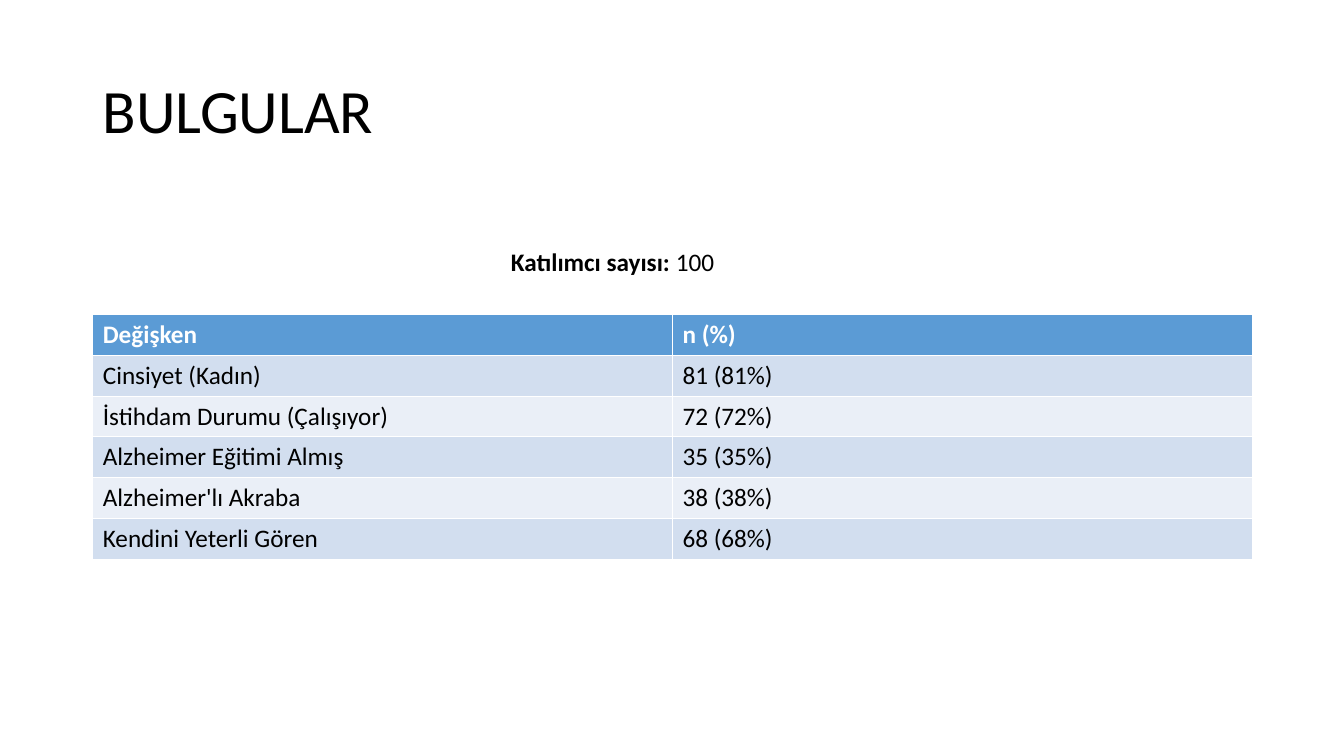
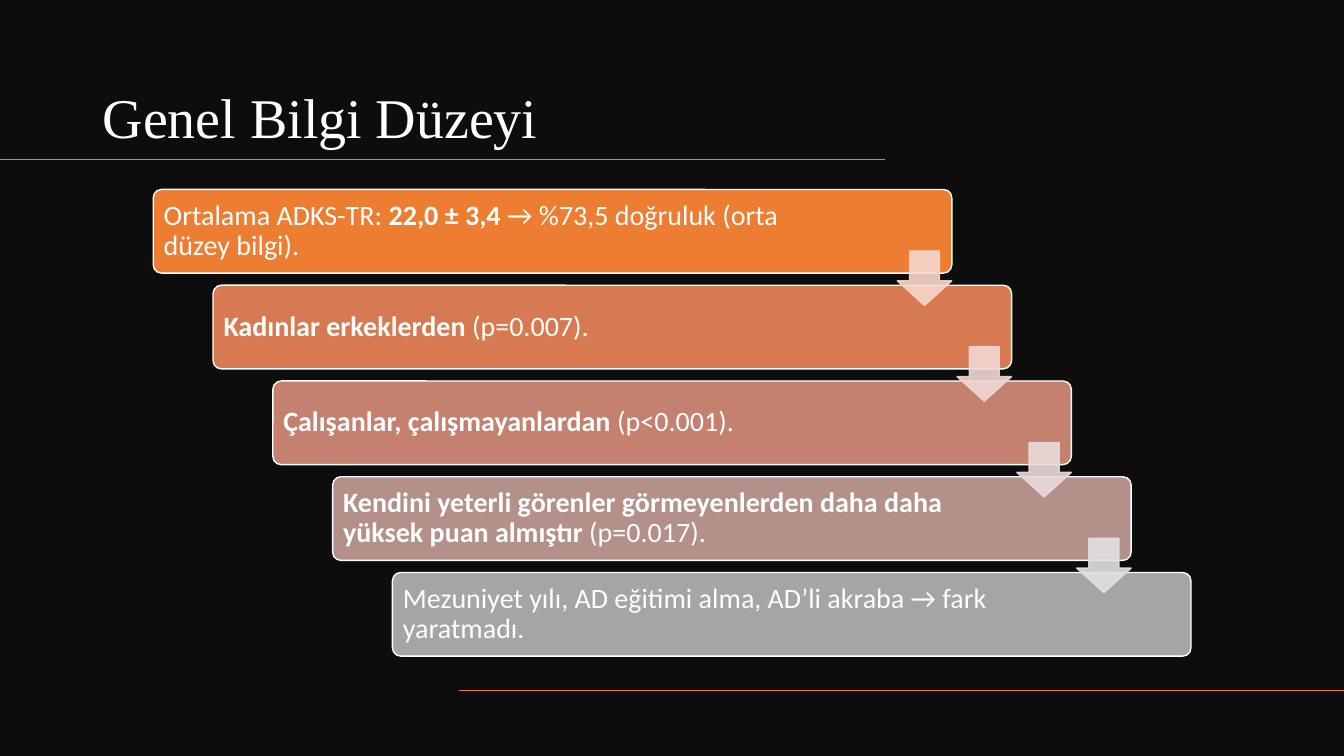
from dataclasses import dataclass

from lxml import etree
from pptx import Presentation
from pptx.dml.color import RGBColor
from pptx.enum.shapes import MSO_CONNECTOR, MSO_SHAPE
from pptx.enum.text import MSO_ANCHOR, PP_ALIGN
from pptx.oxml.ns import qn
from pptx.util import Inches, Pt

STRAIGHT = MSO_CONNECTOR.STRAIGHT
ROUND_RECT, DOWN_ARROW = MSO_SHAPE.ROUNDED_RECTANGLE, MSO_SHAPE.DOWN_ARROW
MIDDLE, BOTTOM = MSO_ANCHOR.MIDDLE, MSO_ANCHOR.BOTTOM
LEFT = PP_ALIGN.LEFT


@dataclass(frozen=True)
class Theme:
    body_font: str = "Calibri"
    serif_font: str = "Times New Roman"
    title_size: int = 44
    dark_title_size: int = 40
    step_size: int = 20
    table_size: int = 18
    black: str = "000000"
    white: str = "FFFFFF"
    dark: str = "0D0D0D"
    accent: str = "ED7D31"
    header: str = "5B9BD5"
    bands: tuple = ("D2DEEF", "EAEFF7")
    steps: tuple = ("ED7D31", "D87A51", "C48170", "B4908B", "A5A5A5")
    arrows: tuple = ("F8D7CE", "F1D8D4", "E9DBDA", "E1E1E1")
    arrow_opacity: int = 90


THEME = Theme()
SLIDE_W, SLIDE_H = 13.33, 7.5
MARGIN = 0.92

FINDINGS = [
    ("Değişken", "n (%)"),
    ("Cinsiyet (Kadın)", "81 (81%)"),
    ("İstihdam Durumu (Çalışıyor)", "72 (72%)"),
    ("Alzheimer Eğitimi Almış", "35 (35%)"),
    ("Alzheimer'lı Akraba", "38 (38%)"),
    ("Kendini Yeterli Gören", "68 (68%)"),
]

# Each step is a list of (text, bold) runs.
STEPS = [
    [("Ortalama ADKS-TR: ", False), ("22,0 ± 3,4", True),
     (" → %73,5 doğruluk (orta düzey bilgi).", False)],
    [("Kadınlar erkeklerden ", True), ("(p=0.007).", False)],
    [("Çalışanlar, çalışmayanlardan ", True), ("(p<0.001).", False)],
    [("Kendini yeterli görenler görmeyenlerden daha daha yüksek puan almıştır", True),
     (" (p=0.017).", False)],
    [("Mezuniyet yılı, AD eğitimi alma, AD’li akraba → fark yaratmadı.", False)],
]


def rgb(value):
    return RGBColor.from_string(value)


def inches(*values):
    return [Inches(v) for v in values]


def write(tf, runs, size, color, font=THEME.body_font, spacing=None):
    """Fill the first paragraph with (text, bold) runs."""
    p = tf.paragraphs[0]
    p.alignment = LEFT
    if spacing:
        p.line_spacing = spacing
    for text, bold in runs:
        r = p.add_run()
        r.text = text
        for name, value in {"name": font, "size": Pt(size), "bold": bold}.items():
            setattr(r.font, name, value)
        r.font.color.rgb = rgb(color)


def add_text(s, box, runs, size, color, anchor=None, **style):
    tf = s.shapes.add_textbox(*inches(*box)).text_frame
    tf.word_wrap = True
    tf.vertical_anchor = anchor
    write(tf, runs, size, color, **style)


def add_title(s, box, text, size, color, anchor, font):
    add_text(s, box, [(text, False)], size, color, anchor, font=font, spacing=0.9)


def add_rule(s, x1, x2, y):
    rule = s.shapes.add_connector(STRAIGHT, *inches(x1, y, x2, y))
    rule.line.color.rgb = rgb(THEME.accent)
    rule.line.width = Pt(1)
    etree.SubElement(rule._element.spPr, qn("a:effectLst"))


def add_shape(s, kind, box, adjustments, fill, line):
    sp = s.shapes.add_shape(kind, *inches(*box))
    sp.shadow.inherit = False
    for i, value in enumerate(adjustments):
        sp.adjustments[i] = value
    sp.fill.solid()
    sp.fill.fore_color.rgb = rgb(fill)
    sp.line.color.rgb = rgb(line)
    sp.line.width = Pt(1)
    return sp


def add_step(s, box, runs, fill):
    sp = add_shape(s, ROUND_RECT, box, [0.1], fill, THEME.white)
    tf = sp.text_frame
    layout = {"word_wrap": True, "vertical_anchor": MIDDLE,
              "margin_left": Inches(0.08), "margin_right": Inches(1.23),
              "margin_top": Inches(0.08), "margin_bottom": Inches(0.08)}
    for name, value in layout.items():
        setattr(tf, name, value)
    write(tf, runs, THEME.step_size, THEME.white, spacing=0.9)


def add_arrow(s, box, color):
    sp = add_shape(s, DOWN_ARROW, box, [0.45, 0.55], color, color)
    # Adjustments run head length first, shaft width second.
    sp.adjustments[0], sp.adjustments[1] = 0.55, 0.45
    for clr in sp._element.spPr.iter(qn("a:srgbClr")):
        etree.SubElement(clr, qn("a:alpha"), val=str(THEME.arrow_opacity * 1000))


def add_table(s, rows, left, top, width, row_h):
    shape = s.shapes.add_table(len(rows), len(rows[0]),
                               *inches(left, top, width, row_h * len(rows)))
    for i, row in enumerate(rows):
        is_header = i == 0
        fill = THEME.header if is_header else THEME.bands[(i - 1) % 2]
        color = THEME.white if is_header else THEME.black
        for j, text in enumerate(row):
            cell = shape.table.cell(i, j)
            cell.fill.solid()
            cell.fill.fore_color.rgb = rgb(fill)
            cell.vertical_anchor = MIDDLE
            write(cell.text_frame, [(text, is_header)], THEME.table_size, color)


def add_staircase(s, left=1.52, top=1.88, width=7.92, height=0.83,
                  dx=0.593, dy=0.95, arrow=0.54, arrow_drop=0.61):
    """Step boxes descend to the right; an arrow joins each to the next."""
    corners = [(left + i * dx, top + i * dy) for i in range(len(STEPS))]
    for (x, y), runs, fill in zip(corners, STEPS, THEME.steps):
        add_step(s, (x, y, width, height), runs, fill)
    for (x, y), color in zip(corners, THEME.arrows):
        add_arrow(s, (x + width - arrow, y + arrow_drop, arrow, arrow), color)


def findings_slide(s):
    add_title(s, (MARGIN, 0.4, 11.5, 1.45), "BULGULAR", THEME.title_size,
              THEME.black, MIDDLE, THEME.body_font)
    add_table(s, FINDINGS, MARGIN, 3.12, 11.5, 0.405)
    add_text(s, (4.97, 2.39, 2.63, 0.4),
             [("Katılımcı sayısı:", True), (" 100", False)],
             THEME.table_size, THEME.black)


def knowledge_slide(s):
    s.background.fill.solid()
    s.background.fill.fore_color.rgb = rgb(THEME.dark)
    add_title(s, (MARGIN, 0.42, 7.86, 1.12), "Genel Bilgi Düzeyi",
              THEME.dark_title_size, THEME.white, BOTTOM, THEME.serif_font)
    rule_w = 8.78
    add_rule(s, 0, rule_w, 1.58)
    add_rule(s, SLIDE_W - rule_w, SLIDE_W, 6.85)
    add_staircase(s)


def main():
    prs = Presentation()
    prs.slide_width, prs.slide_height = inches(SLIDE_W, SLIDE_H)
    blank = prs.slide_layouts[6]
    for build in (findings_slide, knowledge_slide):
        build(prs.slides.add_slide(blank))
    prs.save("out.pptx")


if __name__ == "__main__":
    main()
